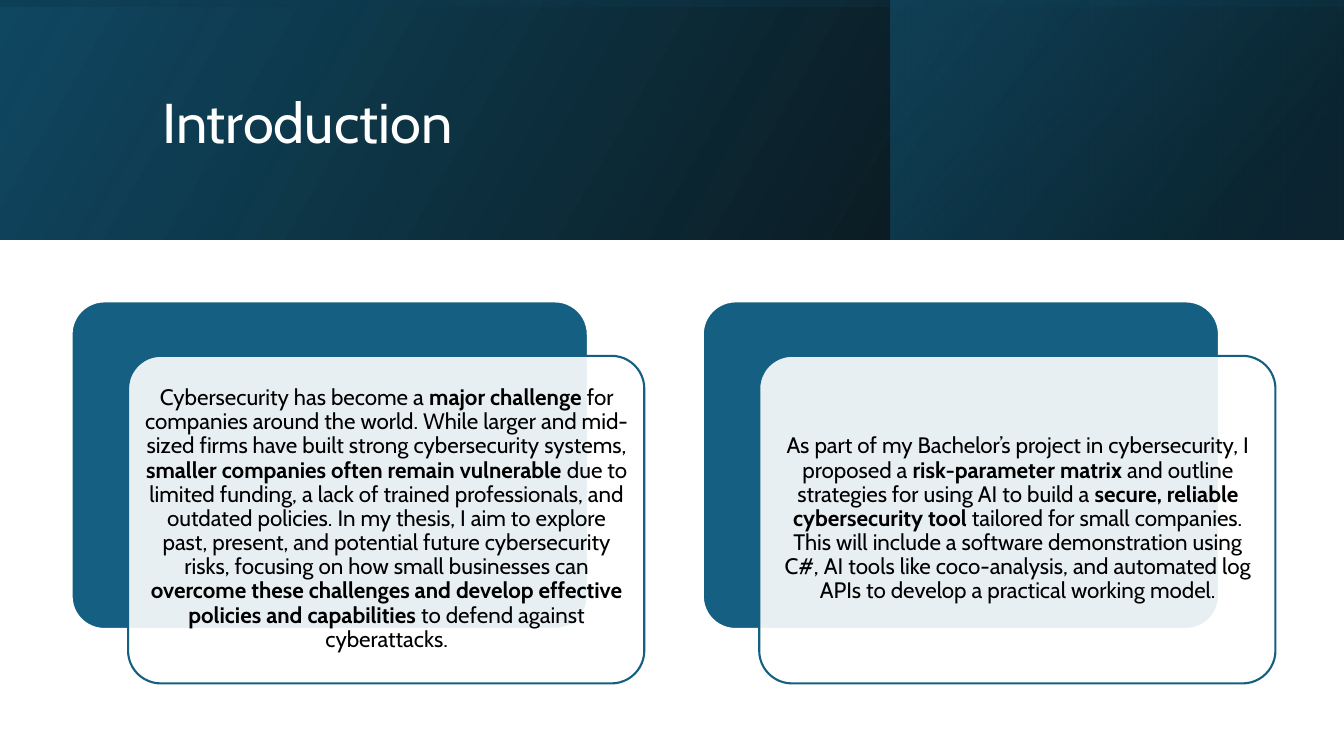
"""Build the Introduction slide with a gradient header and two layered text cards."""
from pptx import Presentation
from pptx.dml.color import RGBColor
from pptx.enum.shapes import MSO_SHAPE as Preset
from pptx.enum.text import MSO_ANCHOR as Anchor, MSO_AUTO_SIZE as AutoSize, PP_ALIGN as Align
from pptx.oxml.ns import qn
from pptx.util import Inches, Pt
from lxml.etree import SubElement

WIDTH, HEADER = 13.33, 2.38
CARD_WIDTH, CARD_HEIGHT = 5.12, 3.25
BLUE, WHITE, BLACK = "156082", "FFFFFF", "000000"


def color(code):
    return RGBColor.from_string(code)


def set_alpha(shape, percents):
    for tint, percent in zip(shape._element.spPr.iter(qn("a:srgbClr")), percents):
        SubElement(tint, qn("a:alpha")).set("val", str(percent * 1000))


deck = Presentation()
deck.slide_width, deck.slide_height = Inches(WIDTH), Inches(7.5)
page = deck.slides.add_slide(deck.slide_layouts[5])

offset = (WIDTH - HEADER) / 2
bands = [
    ((0, 0, WIDTH, HEADER), 0, 330, [(0, BLACK, 96), (1, "104862", 100)]),
    ((8.83, 0, 4.5, HEADER), 0, 320, [(0.19, "0B3041", 68), (1, BLUE, 48)]),
    ((offset, -offset, HEADER, WIDTH), 270, 350, [(0.23, "104862", 16), (0.99, BLACK, 45)]),
]
for place, rotation, angle, stops in bands:
    band = page.shapes.add_shape(Preset.RECTANGLE, *map(Inches, place))
    band.shadow.inherit = False
    band.rotation = rotation
    band._element.spPr.xfrm.set("flipH", "1")
    band.line.fill.background()
    band.fill.gradient()
    band.fill.gradient_angle = 360 - angle
    for stop, (position, code, alpha) in zip(band.fill.gradient_stops, stops):
        stop.position = position
        stop.color.rgb = color(code)
    set_alpha(band, [alpha for position, code, alpha in stops])

title = page.shapes.title
page.shapes._spTree.append(title._element)
for name, value in dict(left=1.51, top=0.38, width=10.63, height=1.72).items():
    setattr(title, name, Inches(value))
title.text_frame.text = "Introduction"
title.text_frame.auto_size = AutoSize.NONE
title.text_frame.vertical_anchor = Anchor.MIDDLE
para = title.text_frame.paragraphs[0]
for name, value in dict(alignment=Align.LEFT, line_spacing=0.9).items():
    setattr(para, name, value)
span = para.runs[0]
for name, value in dict(name="Cabin", size=Pt(40)).items():
    setattr(span.font, name, value)
span.font.color.rgb = color(WHITE)

cards = [
    (0.71, "Cybersecurity has become a *major challenge* for companies around the world. "
     "While larger and mid-sized firms have built strong cybersecurity systems, "
     "*smaller companies often remain vulnerable* due to limited funding, a lack of "
     "trained professionals, and outdated policies. In my thesis, I aim to explore past, "
     "present, and potential future cybersecurity risks, focusing on how small businesses "
     "can *overcome these challenges and develop effective policies and capabilities* "
     "to defend against cyberattacks."),
    (6.97, "As part of my Bachelor’s project in cybersecurity, I proposed a* risk-parameter "
     "matrix *and outline strategies for using AI to build a *secure, reliable "
     "cybersecurity tool* tailored for small companies. This will include a software "
     "demonstration using C#, AI tools like coco-analysis, and automated log APIs to "
     "develop a practical working model."),
]
group = page.shapes.add_group_shape()
for left, words in cards:
    layers = [(left, 2.99, BLUE, WHITE, 100), (left + 0.56, 3.53, WHITE, BLUE, 90)]
    for x, y, fill, outline, alpha in layers:
        card = group.shapes.add_shape(Preset.ROUNDED_RECTANGLE, Inches(x), Inches(y),
                                      Inches(CARD_WIDTH), Inches(CARD_HEIGHT))
        card.shadow.inherit = False
        card.adjustments[0] = 0.1
        card.fill.solid()
        card.fill.fore_color.rgb = color(fill)
        card.line.color.rgb = color(outline)
        card.line.width = Pt(1.5)
        set_alpha(card, [alpha])

    box = group.shapes.add_textbox(Inches(left + 0.65), Inches(3.62), Inches(4.95), Inches(3.06))
    frame = box.text_frame
    for name, value in dict(word_wrap=True, vertical_anchor=Anchor.MIDDLE).items():
        setattr(frame, name, value)
    for side in ("left", "top", "right", "bottom"):
        setattr(frame, "margin_" + side, Inches(0.06))
    para = frame.paragraphs[0]
    for name, value in dict(alignment=Align.CENTER, line_spacing=0.9, space_after=Pt(5.6)).items():
        setattr(para, name, value)
    for index, passage in enumerate(words.split("*")):
        span = para.add_run()
        span.text = passage
        for name, value in dict(name="Cabin", size=Pt(16), bold=index % 2 == 1).items():
            setattr(span.font, name, value)
        span.font.color.rgb = color(BLACK)

deck.save("out.pptx")
